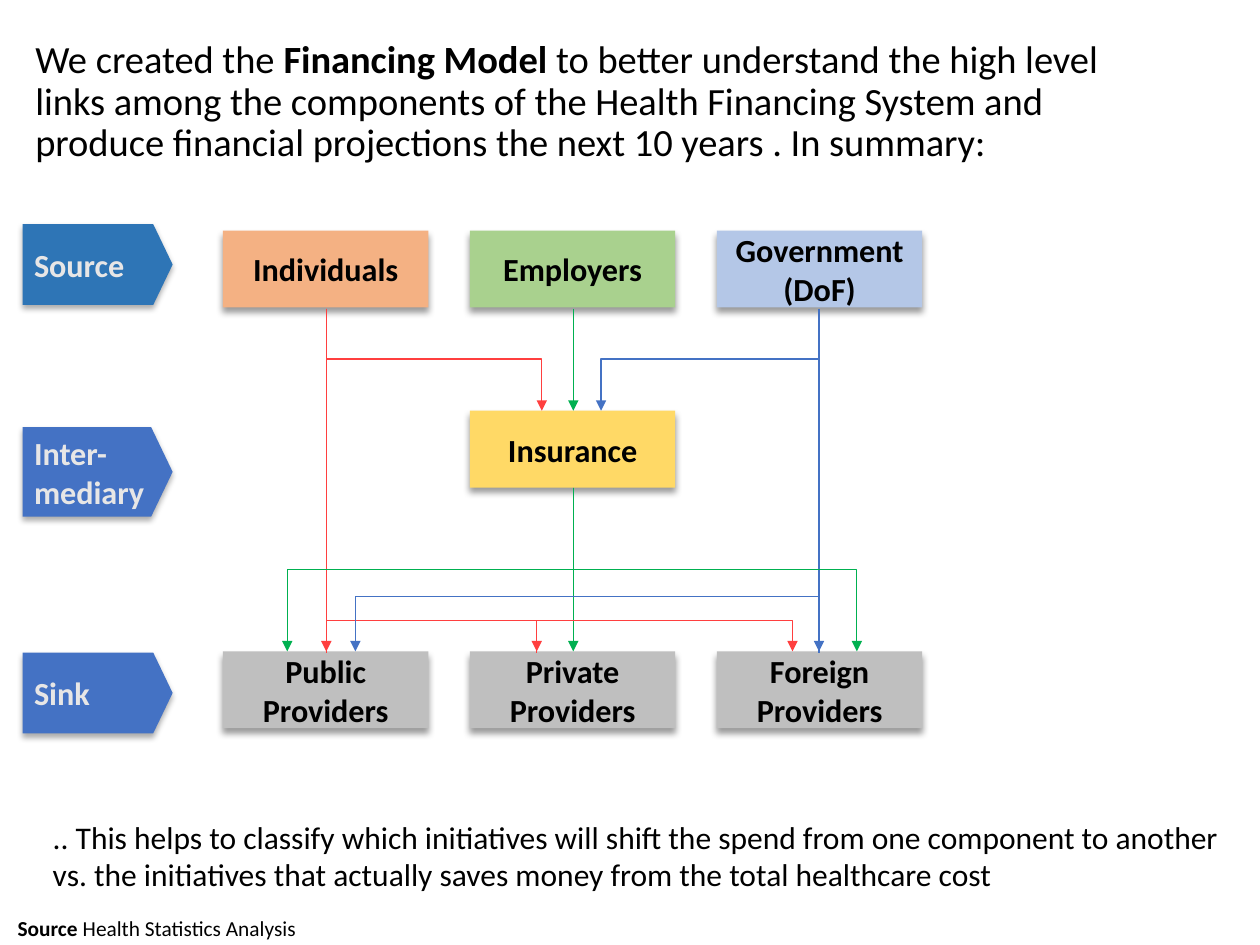
from dataclasses import dataclass

from lxml.etree import SubElement
from pptx import Presentation
from pptx.dml.color import RGBColor
from pptx.enum.shapes import MSO_CONNECTOR, MSO_SHAPE
from pptx.enum.text import MSO_ANCHOR, MSO_AUTO_SIZE, PP_ALIGN
from pptx.oxml.ns import qn
from pptx.util import Inches, Pt


@dataclass(frozen=True)
class Theme:
    font: str = "Calibri"
    text: str = "000000"
    stage_text: str = "E7E6E6"
    source_stage: str = "2E75B6"
    stage: str = "4472C4"
    individuals: str = "F4B183"
    employers: str = "A9D18E"
    government: str = "B4C7E7"
    insurance: str = "FFD966"
    provider: str = "BFBFBF"
    red: str = "FF3F3F"
    green: str = "00B050"
    blue: str = "4472C4"
    title_size: float = 22
    note_size: float = 18
    box_size: float = 18.4
    footer_size: float = 12.2


def write_text(frame, text, *, font, size, color, bold=False, align=PP_ALIGN.LEFT,
               anchor=MSO_ANCHOR.MIDDLE, margins=(0.1, 0.05), line_spacing=None):
    frame.word_wrap = True
    frame.auto_size = MSO_AUTO_SIZE.NONE
    frame.vertical_anchor = anchor
    frame.margin_left = frame.margin_right = Inches(margins[0])
    frame.margin_top = frame.margin_bottom = Inches(margins[1])
    for number, line in enumerate(text.split("\n")):
        paragraph = frame.add_paragraph() if number else frame.paragraphs[0]
        paragraph.alignment = align
        if line_spacing:
            paragraph.line_spacing = line_spacing
        for position, piece in enumerate(line.split("**")):
            if not piece:
                continue
            run = paragraph.add_run()
            run.text = piece
            run.font.name = font
            run.font.size = Pt(size)
            run.font.bold = bold or position % 2 == 1
            run.font.color.rgb = RGBColor.from_string(color)


class SlideBuilder:
    def __init__(self, slide, theme):
        self.slide = slide
        self.theme = theme

    def title(self, text, left, top, width, height):
        title = self.slide.shapes.title
        title.left, title.top = Inches(left), Inches(top)
        title.width, title.height = Inches(width), Inches(height)
        write_text(title.text_frame, text, font=self.theme.font,
                   size=self.theme.title_size, color=self.theme.text, line_spacing=0.9)

    def text_box(self, text, left, top, width, height, **style):
        box = self.slide.shapes.add_textbox(
            Inches(left), Inches(top), Inches(width), Inches(height))
        write_text(box.text_frame, text, font=self.theme.font,
                   color=self.theme.text, **style)

    def block(self, kind, text, left, top, width, height, fill, shadow, **style):
        shape = self.slide.shapes.add_shape(
            kind, Inches(left), Inches(top), Inches(width), Inches(height))
        shape.fill.solid()
        shape.fill.fore_color.rgb = RGBColor.from_string(fill)
        shape.line.fill.background()
        self.add_shadow(shape, *shadow)
        write_text(shape.text_frame, text, font=self.theme.font,
                   size=self.theme.box_size, bold=True, **style)
        return shape

    def add_shadow(self, shape, opacity, blur, distance):
        shape.shadow.inherit = False
        effects = shape._element.spPr.find(qn("a:effectLst"))
        outer = SubElement(effects, qn("a:outerShdw"), blurRad=str(Pt(blur)),
                           dist=str(Pt(distance)), dir="5400000",
                           algn="t", rotWithShape="0")
        color = SubElement(outer, qn("a:srgbClr"), val="000000")
        SubElement(color, qn("a:alpha"), val=str(opacity * 1000))

    def component(self, text, left, top, fill):
        self.block(MSO_SHAPE.RECTANGLE, text, left, top, 1.63, 0.61, fill, (40, 4, 3),
                   color=self.theme.text, align=PP_ALIGN.CENTER, margins=(0.02, 0.05))

    def stage(self, text, top, height, fill):
        shape = self.block(MSO_SHAPE.PENTAGON, text, 0.18, top, 1.19, height, fill,
                           (32, 3.5, 2.2), color=self.theme.stage_text,
                           margins=(0.09, 0.05))
        shape.adjustments[0] = 0.24

    def arrow(self, start, end, color, width=0.75, kind=MSO_CONNECTOR.STRAIGHT):
        connector = self.slide.shapes.add_connector(
            kind, *(Inches(value) for value in (*start, *end)))
        connector.line.color.rgb = RGBColor.from_string(color)
        connector.line.width = Pt(width)
        SubElement(connector.line._get_or_add_ln(), qn("a:tailEnd"), type="triangle")
        SubElement(connector._element.spPr, qn("a:effectLst"))
        return connector

    def elbow(self, start, end, bend, color, width=0.75):
        across, down = end[0] - start[0], end[1] - start[1]
        center_x, center_y = (start[0] + end[0]) / 2, (start[1] + end[1]) / 2
        half_width = abs(down) / 2 * (-1 if across > 0 else 1)
        half_height = abs(across) / 2 * (-1 if down < 0 else 1)
        connector = self.arrow((center_x - half_width, center_y - half_height),
                               (center_x + half_width, center_y + half_height),
                               color, width, MSO_CONNECTOR.ELBOW)
        properties = connector._element.spPr
        degrees = 90 if across * down < 0 else 270
        properties.find(qn("a:xfrm")).set("rot", str(degrees * 60000))
        guides = properties.find(qn("a:prstGeom")).get_or_add_avLst()
        ratio = round((bend - start[1]) / down * 100000)
        SubElement(guides, qn("a:gd"), name="adj1", fmla=f"val {ratio}")


def main():
    theme = Theme()
    presentation = Presentation()
    presentation.slide_width, presentation.slide_height = Inches(10), Inches(7.5)
    slide = presentation.slides.add_slide(presentation.slide_layouts[5])
    builder = SlideBuilder(slide, theme)

    builder.title("We created the **Financing Model **to better understand the high level "
                  "links among the components of the Health Financing System and produce "
                  "financial projections the next 10 years . In summary:",
                  0.18, 0.61, 9.11, 0.41)

    columns = [1.77 + 1.96 * number for number in range(3)]
    sources = (("Individuals", theme.individuals), ("Employers", theme.employers),
               ("Government\n(DoF)", theme.government))
    for left, (name, fill) in zip(columns, sources):
        builder.component(name, left, 1.83, fill)
    builder.component("Insurance", columns[1], 3.26, theme.insurance)
    for left, name in zip(columns, ("Public", "Private", "Foreign")):
        builder.component(f"{name} Providers", left, 5.17, theme.provider)

    for name, top, height, fill in (("Source", 1.78, 0.64, theme.source_stage),
                                    ("Inter-mediary", 3.39, 0.71, theme.stage),
                                    ("Sink", 5.18, 0.64, theme.stage)):
        builder.stage(name, top, height, fill)

    individuals, employers, government = 2.59, 4.55, 6.5
    source_bottom, insurance_top, insurance_bottom = 2.45, 3.26, 3.87
    sink_top, sink_start = 5.17, 5.18

    for x, bottom, color in ((individuals, sink_top, theme.red),
                             (government, sink_top, theme.blue),
                             (employers, insurance_top, theme.green)):
        builder.arrow((x, source_bottom), (x, bottom), color)
    builder.arrow((employers, insurance_bottom), (employers, sink_top), theme.green, 0.5)

    for start, end, color in ((government, 4.77, theme.blue),
                              (individuals, 4.3, theme.red)):
        builder.elbow((start, source_bottom), (end, insurance_top), 2.85, color)
    for start, end, bend, color in ((individuals, 4.26, 4.92, theme.red),
                                    (4.26, 6.29, 4.92, theme.red),
                                    (government, 2.82, 4.73, theme.blue)):
        builder.elbow((start, sink_start), (end, sink_top), bend, color)
    for end in (2.28, 6.8):
        builder.elbow((employers, insurance_bottom), (end, sink_top), 4.52,
                      theme.green, 0.5)

    builder.text_box(".. This helps to classify which initiatives will shift the spend from "
                     "one component to another vs. the initiatives that actually saves money "
                     "from the total healthcare cost", 0.32, 6.44, 9.53, 0.71,
                     size=theme.note_size, anchor=MSO_ANCHOR.TOP)
    builder.text_box("**Source **Health Statistics Analysis", 0.14, 7.26, 9.05, 0.21,
                     size=theme.footer_size, anchor=MSO_ANCHOR.BOTTOM, margins=(0, 0))
    presentation.save("out.pptx")


if __name__ == "__main__":
    main()
